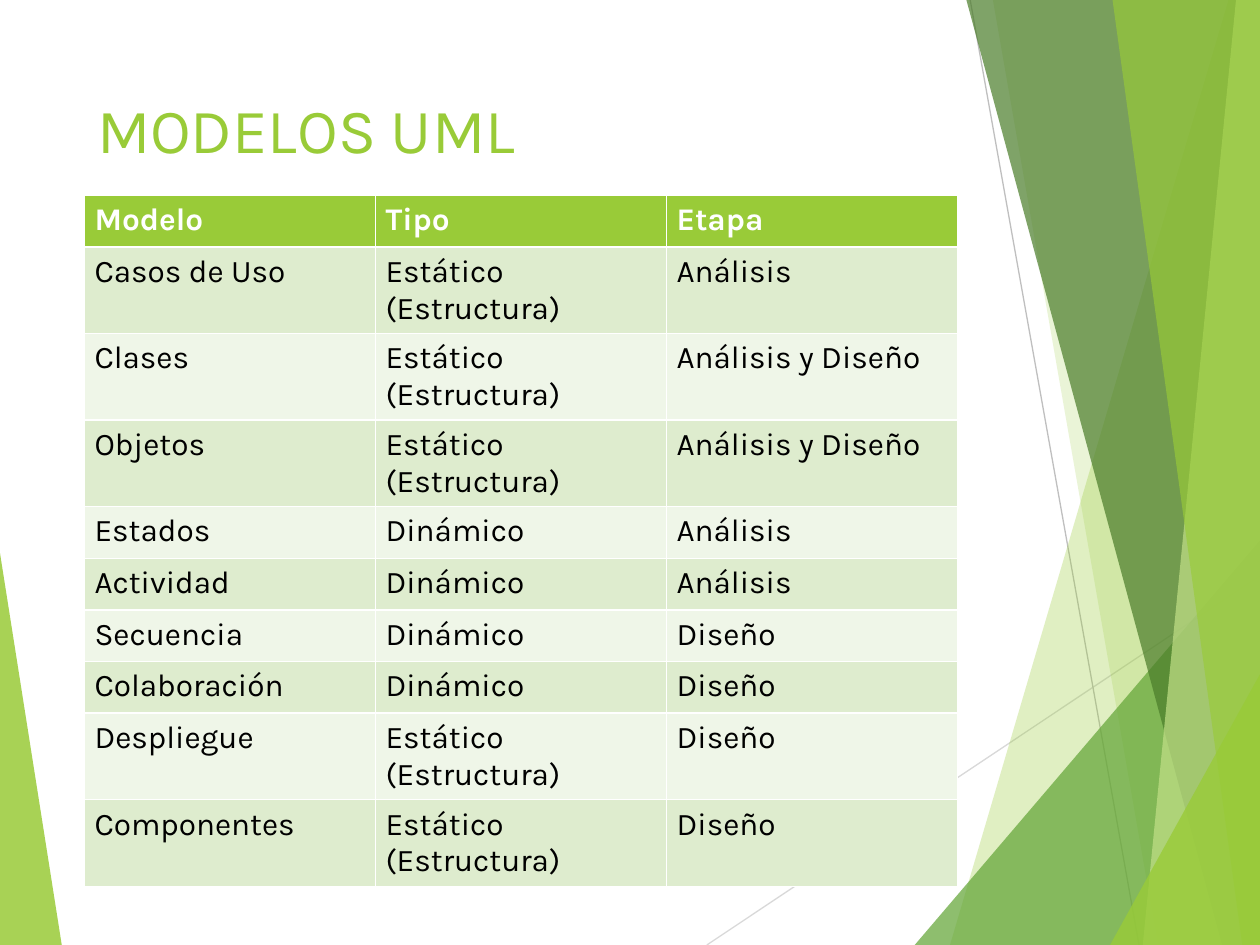
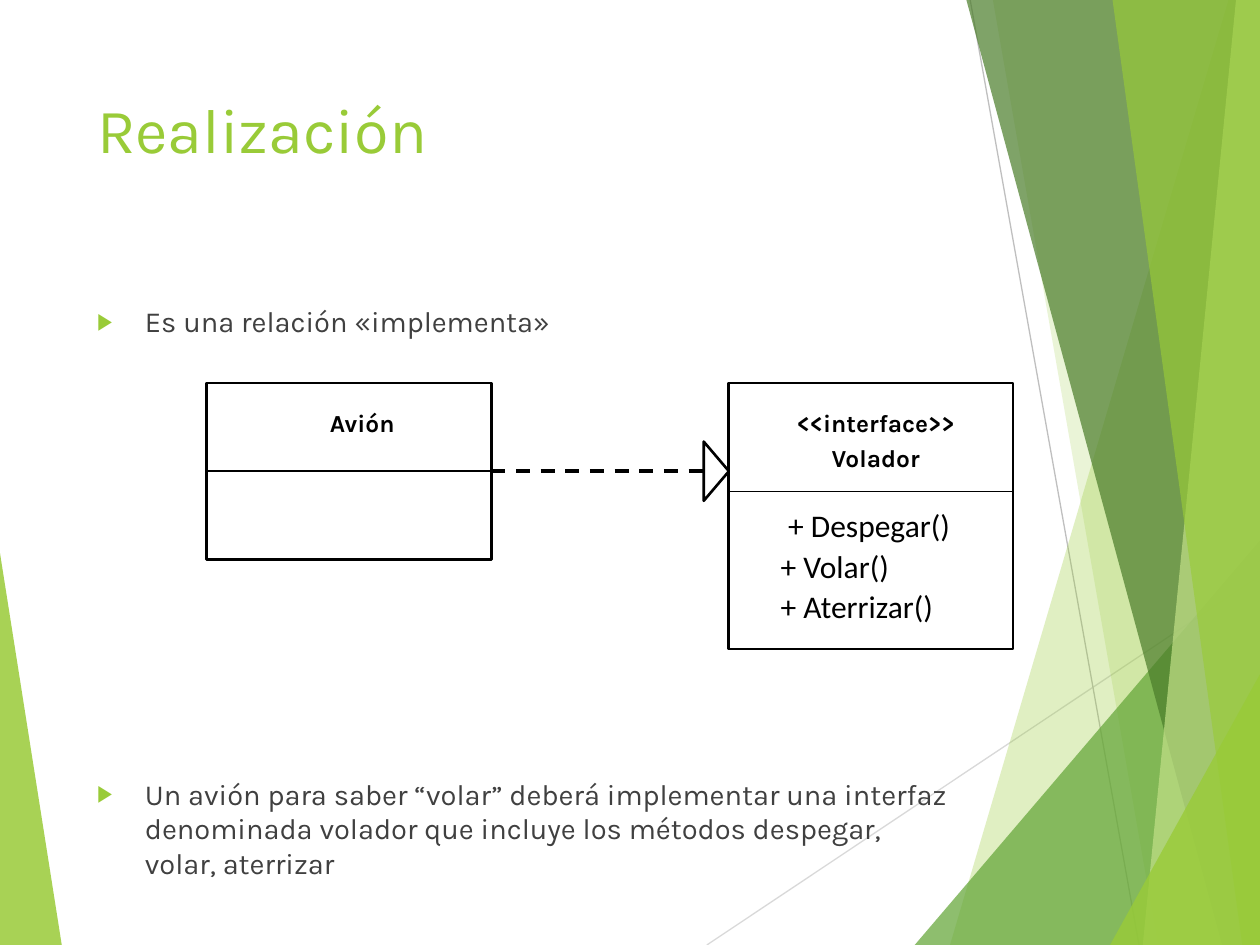
import pptx
import pptx.dml.color
import pptx.enum.dml
import pptx.enum.shapes
import pptx.enum.text
import pptx.oxml
import pptx.oxml.ns
import pptx.util
from pptx.util import Inches

LIME = "99CB38"
LEAF = "63A537"
FOREST = "4A7C29"
PALE = "C2E088"
BLACK = "000000"
WHITE = "FFFFFF"
BODY_GREY = "404040"
ROW_BANDS = ("DEECCE", "EFF6E8")

LEFT_WEDGE = (LIME, 85, [(0, 4.39), (0.49, 7.5), (0, 7.5)])
RIGHT_FACETS = [
    (LIME, 30, [(9.75, 0), (7.54, 7.5), (10, 7.5), (10, 0)]),
    (LIME, 20, [(7.88, 0), (9.19, 7.5), (10, 7.5), (10, 0)]),
    (LEAF, 72, [(7.26, 7.5), (10, 4.29), (10, 7.5)]),
    (FOREST, 70, [(7.67, 0), (9.7, 7.5), (10, 7.5), (10, 0)]),
    (PALE, 70, [(9.81, 0), (9.07, 7.5), (10, 7.5), (10, 0)]),
    (LIME, 65, [(8.83, 0), (9.86, 7.5), (10, 7.5), (10, 0)]),
    (LIME, 80, [(8.81, 7.5), (10, 5.35), (10, 7.5)]),
]
BACKGROUND_LINES = [
    ((5.61, 7.5), (10, 4.57), "D9D9D9"),
    ((7.7, 0), (9.04, 7.5), "BFBFBF"),
]

STATIC = "Estático (Estructura)"
DYNAMIC = "Dinámico"
UML_MODELS = [
    ("Modelo", "Tipo", "Etapa"),
    ("Casos de Uso", STATIC, "Análisis"),
    ("Clases", STATIC, "Análisis y Diseño"),
    ("Objetos", STATIC, "Análisis y Diseño"),
    ("Estados", DYNAMIC, "Análisis"),
    ("Actividad", DYNAMIC, "Análisis"),
    ("Secuencia", DYNAMIC, "Diseño"),
    ("Colaboración", DYNAMIC, "Diseño"),
    ("Despliegue", STATIC, "Diseño"),
    ("Componentes", STATIC, "Diseño"),
]

ALIGN = pptx.enum.text.PP_ALIGN
SHAPE = pptx.enum.shapes.MSO_SHAPE
TITLE_FONT = {"name": "Karla", "size": pptx.util.Pt(36)}
BODY_FONT = {"name": "Karla", "size": pptx.util.Pt(16.6)}
CELL_FONT = {"name": "Karla", "size": pptx.util.Pt(18), "bold": False}
HEADER_FONT = {**CELL_FONT, "bold": True}
CLASS_FONT = {"name": "Karla", "size": pptx.util.Pt(14), "bold": True}
METHOD_FONT = {"name": "Calibri", "size": pptx.util.Pt(18)}
TOP_FRAME = {
    "word_wrap": True,
    "auto_size": pptx.enum.text.MSO_AUTO_SIZE.NONE,
    "vertical_anchor": pptx.enum.text.MSO_ANCHOR.TOP,
}
CELL_MARGINS = {
    "margin_left": Inches(0.08),
    "margin_right": Inches(0.08),
    "margin_top": Inches(0.05),
    "margin_bottom": Inches(0.05),
}


def color(value):
    return pptx.dml.color.RGBColor.from_string(value)


def apply(target, values):
    for name, value in values.items():
        setattr(target, name, value)


def add_xml(parent, tag, **attributes):
    element = pptx.oxml.parse_xml(f"<a:{tag} {pptx.oxml.ns.nsdecls('a')}/>")
    for name, value in attributes.items():
        element.set(name, value)
    parent.append(element)
    return element


class Deck:
    def __init__(self):
        self.presentation = pptx.Presentation()
        self.presentation.slide_width = Inches(10)
        self.presentation.slide_height = Inches(7.5)
        self.slide = None

    def add_slide(self, layout_index, title):
        layout = self.presentation.slide_layouts[layout_index]
        self.slide = self.presentation.slides.add_slide(layout)
        self.place(self.slide.shapes.title, 0.67, 0.67, 6.94, 1.44)
        frame = self.slide.shapes.title.text_frame
        apply(frame, TOP_FRAME)
        self.add_text(frame.paragraphs[0], title, TITLE_FONT, LIME, alignment=ALIGN.LEFT)

    def place(self, shape, left, top, width, height):
        apply(shape, {
            "left": Inches(left), "top": Inches(top),
            "width": Inches(width), "height": Inches(height),
        })

    def add_text(self, paragraph, text, font, font_color, **paragraph_format):
        run = paragraph.add_run()
        run.text = text
        apply(run.font, font)
        run.font.color.rgb = color(font_color)
        apply(paragraph, paragraph_format)

    def facet(self, fill, opacity, points):
        corners = [(Inches(x), Inches(y)) for x, y in points]
        builder = self.slide.shapes.build_freeform(*corners[0])
        builder.add_line_segments(corners[1:], close=True)
        shape = builder.convert_to_shape()
        shape.shadow.inherit = False
        shape.line.fill.background()
        shape.fill.solid()
        shape.fill.fore_color.rgb = color(fill)
        tint = shape.element.xpath("./p:spPr/a:solidFill/a:srgbClr")[0]
        add_xml(tint, "alpha", val=str(opacity * 1000))
        return shape

    def line(self, start, end, line_color, width):
        points = [Inches(value) for value in (*start, *end)]
        connector = self.slide.shapes.add_connector(
            pptx.enum.shapes.MSO_CONNECTOR.STRAIGHT, *points)
        connector.line.color.rgb = color(line_color)
        connector.line.width = pptx.util.Pt(width)
        add_xml(connector.element.spPr, "effectLst")
        return connector

    def background(self):
        pieces = [self.facet(*LEFT_WEDGE)]
        pieces += [self.line(*ends, 0.75) for ends in BACKGROUND_LINES]
        pieces += [self.facet(*facet) for facet in RIGHT_FACETS]
        master_tree = self.presentation.slide_master.shapes.element
        for index, piece in enumerate(pieces):
            piece.element.xpath(".//p:cNvPr")[0].set("id", str(100 + index))
            master_tree.insert(2 + index, piece.element)

    def table(self, rows, left, top, column_width, row_height):
        column_count = len(rows[0])
        table = self.slide.shapes.add_table(
            len(rows), column_count, Inches(left), Inches(top),
            Inches(column_width * column_count), Inches(row_height * len(rows))).table
        for column in table.columns:
            column.width = Inches(column_width)
        for row_index, row in enumerate(rows):
            header = row_index == 0
            fill = LIME if header else ROW_BANDS[(row_index - 1) % 2]
            for column_index, text in enumerate(row):
                cell = table.cell(row_index, column_index)
                apply(cell, CELL_MARGINS)
                cell.fill.solid()
                cell.fill.fore_color.rgb = color(fill)
                self.add_text(cell.text_frame.paragraphs[0], text,
                              HEADER_FONT if header else CELL_FONT,
                              WHITE if header else BLACK)

    def bullets(self, items):
        body = self.slide.placeholders[1]
        self.place(body, 0.67, 2.36, 6.94, 4.24)
        frame = body.text_frame
        apply(frame, TOP_FRAME)
        for index, (text, space_before) in enumerate(items):
            paragraph = frame.add_paragraph() if index else frame.paragraphs[0]
            self.add_text(paragraph, text, BODY_FONT, BODY_GREY,
                          space_before=pptx.util.Pt(space_before))
            properties = paragraph._p.get_or_add_pPr()
            properties.set("marL", str(Inches(0.38)))
            properties.set("indent", str(Inches(-0.38)))
            add_xml(add_xml(properties, "buClr"), "srgbClr", val=LIME)
            add_xml(properties, "buSzPct", val="80000")
            add_xml(properties, "buFont", typeface="Arial")
            add_xml(properties, "buChar", char="▶")

    def outline(self, kind, left, top, width, height, rotation=0):
        shape = self.slide.shapes.add_shape(
            kind, Inches(left), Inches(top), Inches(width), Inches(height))
        shape.shadow.inherit = False
        shape.rotation = rotation
        shape.fill.background()
        shape.line.color.rgb = color(BLACK)
        shape.line.width = pptx.util.Pt(1.5)
        return shape

    def label(self, lines, left, top, width, height, font, wrap=True):
        box = self.slide.shapes.add_textbox(
            Inches(left), Inches(top), Inches(width), Inches(height))
        frame = box.text_frame
        frame.word_wrap = wrap
        for index, text in enumerate(lines):
            paragraph = frame.add_paragraph() if index else frame.paragraphs[0]
            self.add_text(paragraph, text, font, BLACK, alignment=ALIGN.CENTER,
                          space_before=pptx.util.Pt(3 if index else 0))


def models_slide(deck):
    deck.add_slide(5, "MODELOS UML")
    deck.background()
    deck.table(UML_MODELS, 0.67, 1.55, 2.31, 0.41)


def realization_slide(deck):
    deck.add_slide(1, "Realización")
    deck.bullets([
        ("Es una relación «implementa»", 0),
        ("Un avión para saber “volar” deberá implementar una interfaz denominada "
         "volador que incluye los métodos despegar, volar, aterrizar", 250),
    ])

    plane = deck.outline(SHAPE.RECTANGLE, 1.64, 3.04, 2.26, 1.4)
    plane_divider = deck.line((1.64, 3.74), (3.9, 3.74), BLACK, 1)
    plane_divider.begin_connect(plane, 1)
    plane_divider.end_connect(plane, 3)
    deck.label(["Avión"], 2.08, 3.19, 1.59, 0.4, CLASS_FONT)

    realization = deck.line((3.9, 3.74), (5.58, 3.74), BLACK, 2)
    realization.line.dash_style = pptx.enum.dml.MSO_LINE.DASH
    realization.begin_connect(plane, 3)
    deck.outline(SHAPE.ISOSCELES_TRIANGLE, 5.45, 3.64, 0.47, 0.2, rotation=90)

    deck.outline(SHAPE.RECTANGLE, 5.78, 3.04, 2.26, 2.11)
    deck.line((5.78, 3.9), (8.04, 3.9), BLACK, 1)
    deck.label(["<<interface>>", "Volador"], 6.09, 3.19, 1.72, 0.63, CLASS_FONT)
    methods = [(" + Despegar()", 1.56), ("+ Volar()", 1.07), ("+ Aterrizar()", 1.42)]
    for index, (method, width) in enumerate(methods):
        deck.label([method], 6.09, 3.97 + 0.32 * index, width, 0.4,
                   METHOD_FONT, wrap=False)


def main():
    deck = Deck()
    models_slide(deck)
    realization_slide(deck)
    deck.presentation.save("out.pptx")


if __name__ == "__main__":
    main()
